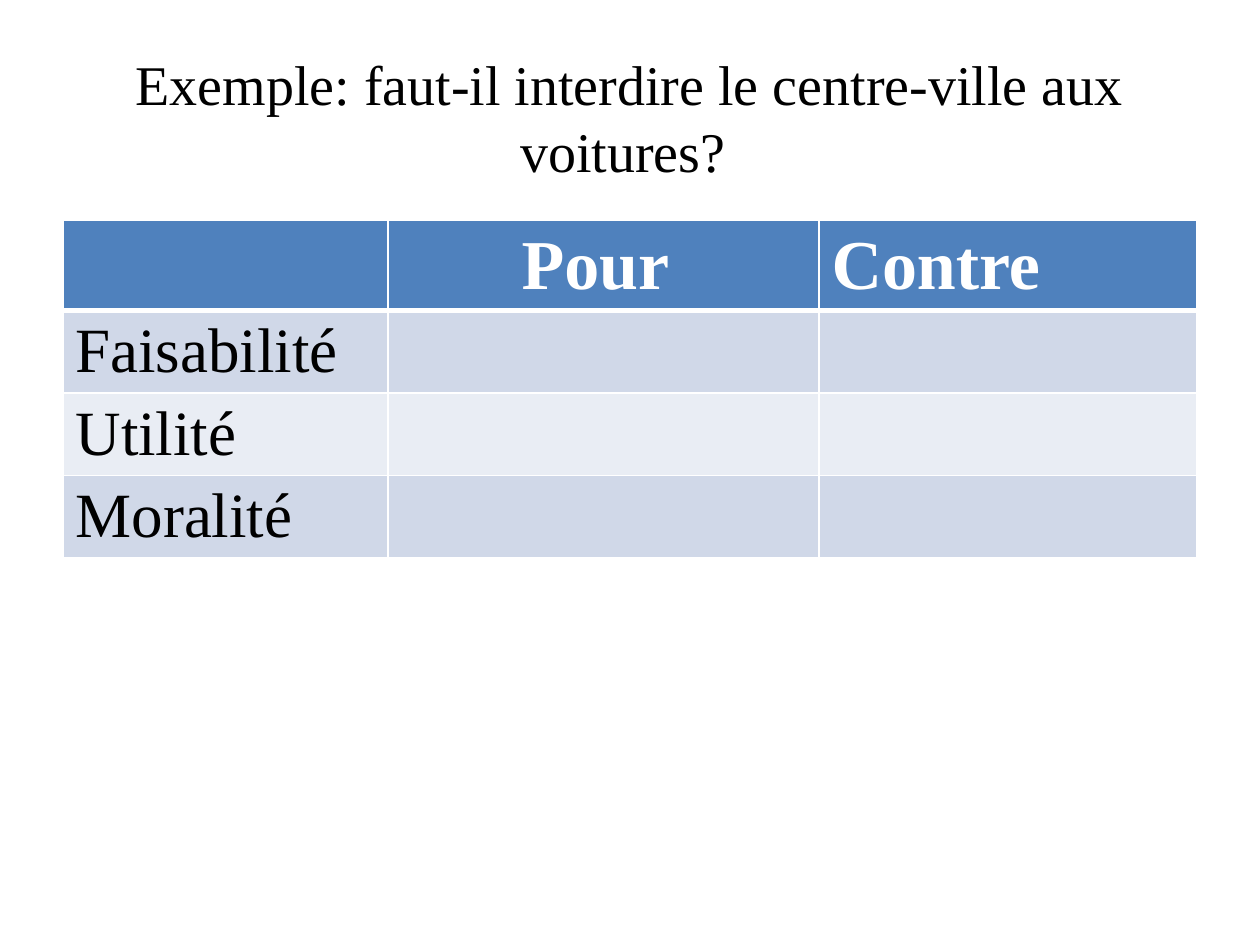
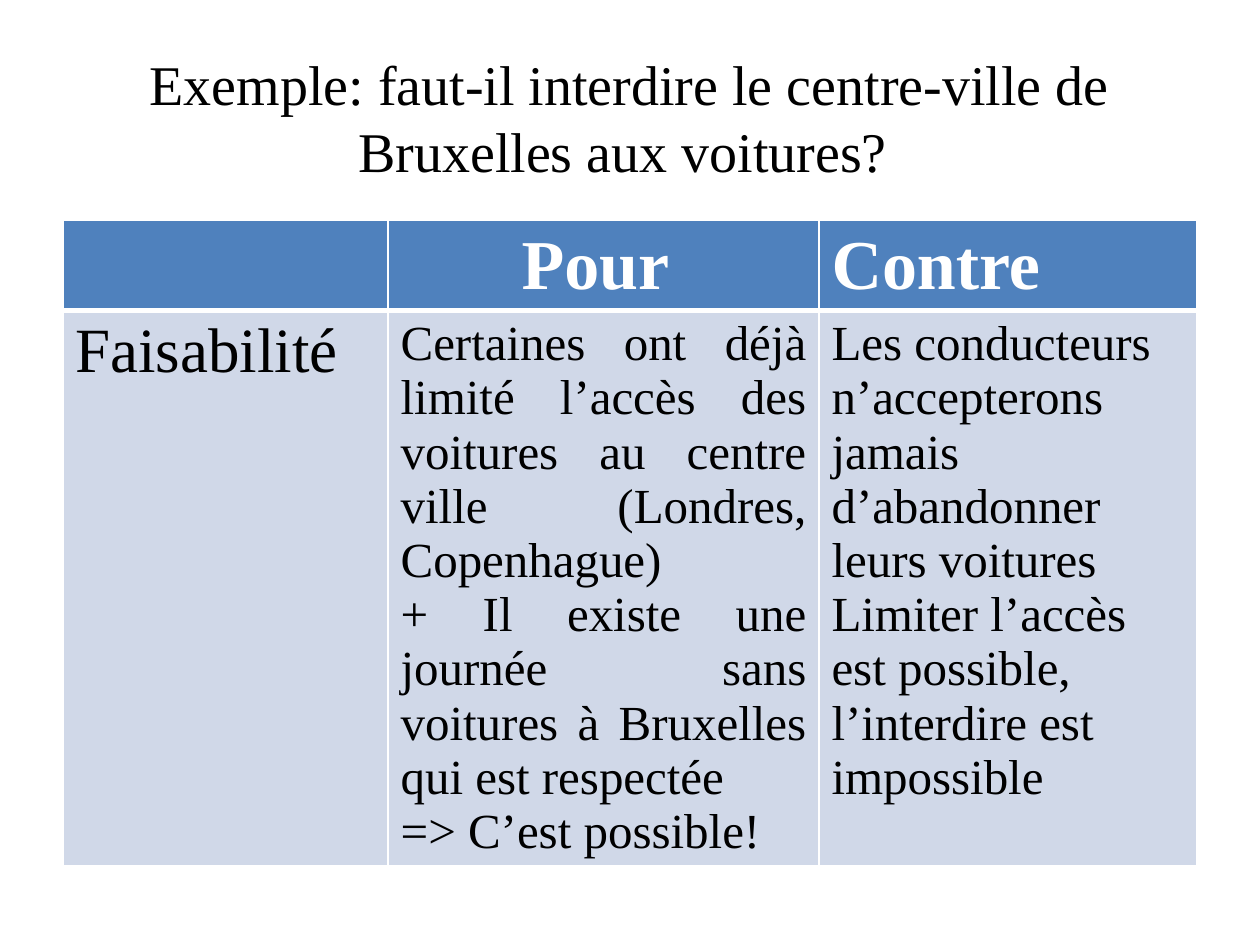
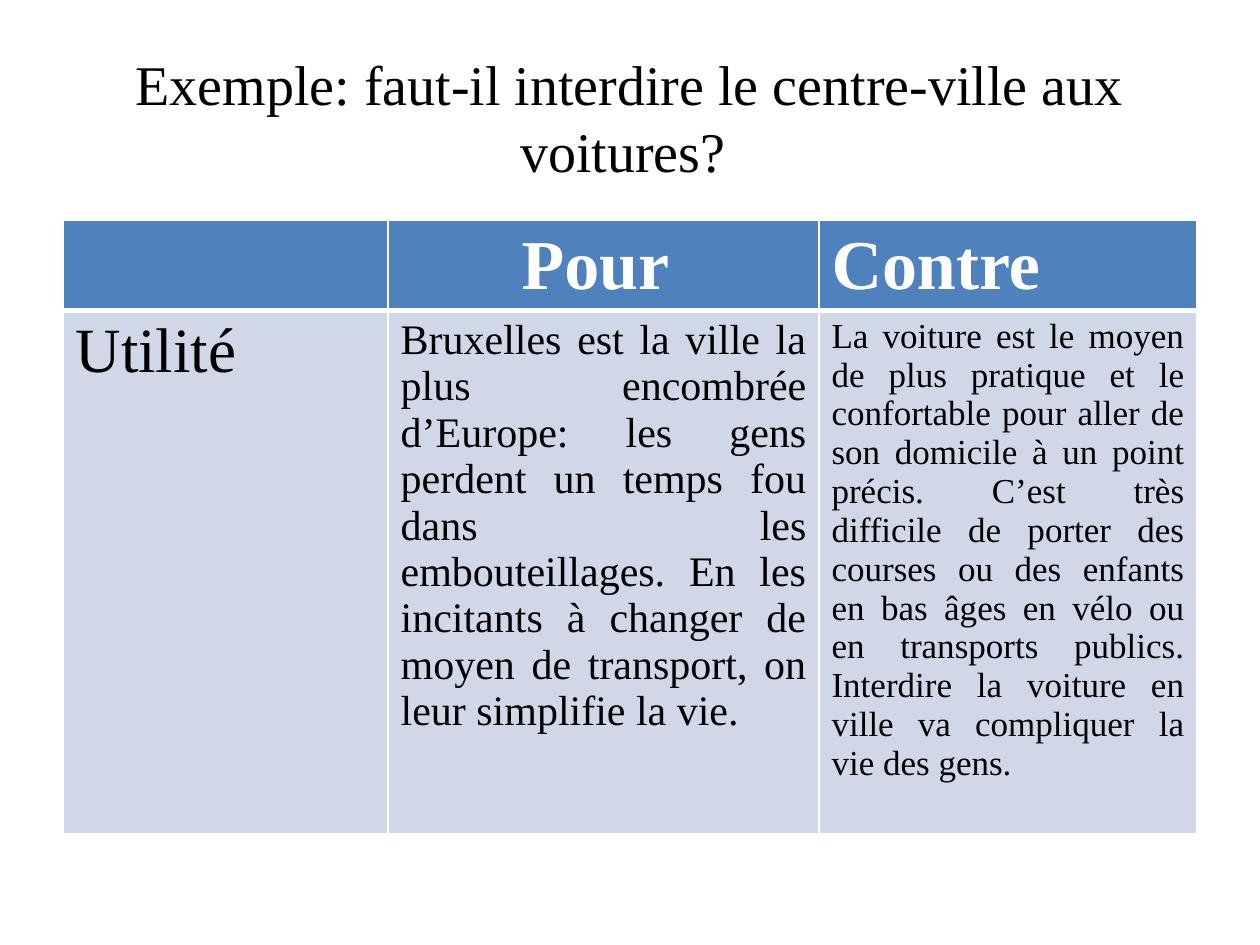
from lxml import etree
from pptx import Presentation
from pptx import util as u
from pptx.dml import color
from pptx.enum import text
from pptx.oxml import ns

GRID_COLUMNS, GRID_ROWS = 20, 30
COLUMN_SPANS = (5.16, 6.84, 6)
HEADER_ROWS, CRITERION_ROWS = 2.8, 2.6
LEFT, CENTER, JUSTIFY = text.PP_ALIGN.LEFT, text.PP_ALIGN.CENTER, text.PP_ALIGN.JUSTIFY

HEADER_FILL, BODY_FILLS = "4F81BD", ("D0D8E8", "E9EDF4")
BLACK, WHITE = "000000", "FFFFFF"
THIN, THICK = 1, 3

QUESTION = "Exemple: faut-il interdire le centre-ville aux voitures? "
BRUSSELS_QUESTION = "Exemple: faut-il interdire le centre-ville de Bruxelles aux voitures? "
FEASIBILITY_FOR = (
    "Certaines ont déjà limité l’accès des voitures au centre ville (Londres, Copenhague)",
    "+ Il existe une journée sans voitures à Bruxelles qui est respectée",
    "=> C’est possible!",
)
FEASIBILITY_AGAINST = (
    "Les conducteurs n’accepterons jamais d’abandonner leurs voitures",
    "Limiter l’accès est possible, l’interdire est impossible",
)
UTILITY_FOR = (
    "Bruxelles est la ville la plus encombrée d’Europe: les gens perdent un temps fou "
    "dans les embouteillages. En les incitants à changer de moyen de transport, "
    "on leur simplifie la vie. ",
)
UTILITY_AGAINST = (
    "La voiture est le moyen de plus pratique et le confortable pour aller de son domicile "
    "à un point précis. C’est très difficile de porter des courses ou des enfants en bas âges "
    "en vélo ou en transports publics. Interdire la voiture en ville va compliquer la vie des gens.",
)


def rgb(value):
    return color.RGBColor.from_string(value)


def assign(target, values):
    for name, value in values.items():
        setattr(target, name, value)


class Deck:
    font = "Times New Roman"

    def __init__(self):
        self.presentation = Presentation()
        assign(self.presentation, {"slide_width": u.Inches(10), "slide_height": u.Inches(7.5)})
        self.slide = None

    def across(self, columns):
        return round(self.presentation.slide_width * columns / GRID_COLUMNS)

    def down(self, rows):
        return round(self.presentation.slide_height * rows / GRID_ROWS)

    def box(self, left, top, width, height):
        return {"left": self.across(left), "top": self.down(top),
                "width": self.across(width), "height": self.down(height)}

    def add_lines(self, frame, lines, size, alignment=LEFT, ink=BLACK, bold=False):
        for index, line in enumerate(lines):
            paragraph = frame.add_paragraph() if index else frame.paragraphs[0]
            paragraph.alignment = alignment
            run = paragraph.add_run()
            run.text = line
            assign(run.font, {"name": self.font, "size": u.Pt(size), "bold": bold})
            run.font.color.rgb = rgb(ink)

    def add_slide(self, title):
        self.slide = self.presentation.slides.add_slide(self.presentation.slide_layouts[5])
        shape = self.slide.shapes.title
        assign(shape, self.box(1, 1.2, 18, 5))
        assign(shape.text_frame, {"word_wrap": True, "auto_size": text.MSO_AUTO_SIZE.NONE,
                                  "vertical_anchor": text.MSO_ANCHOR.MIDDLE})
        self.add_lines(shape.text_frame, [title], 32, CENTER)

    def style_cell(self, cell, fill, top, bottom):
        cell.fill.solid()
        cell.fill.fore_color.rgb = rgb(fill)
        properties = cell._tc.get_or_add_tcPr()
        widths = {"a:lnL": THIN, "a:lnR": THIN, "a:lnT": top, "a:lnB": bottom}
        for index, (tag, width) in enumerate(widths.items()):
            line = etree.Element(ns.qn(tag), w=str(u.Pt(width)))
            solid = etree.SubElement(line, ns.qn("a:solidFill"))
            etree.SubElement(solid, ns.qn("a:srgbClr"), val=WHITE)
            properties.insert(index, line)

    def add_arguments(self, criteria, body_rows=CRITERION_ROWS):
        heights = [HEADER_ROWS] + [body_rows] * len(criteria)
        box = self.box(1, 7, sum(COLUMN_SPANS), sum(heights))
        table = self.slide.shapes.add_table(len(heights), len(COLUMN_SPANS), **box).table
        for column, span in zip(table.columns, COLUMN_SPANS):
            column.width = self.across(span)
        for index, height in enumerate(heights):
            table.rows[index].height = self.down(height)
            fill = BODY_FILLS[(index - 1) % 2] if index else HEADER_FILL
            for cell in table.rows[index].cells:
                self.style_cell(cell, fill, THICK if index == 1 else THIN,
                                THIN if index else THICK)
        for column, (heading, alignment) in enumerate((("Pour ", CENTER), ("Contre", LEFT)), 1):
            self.add_lines(table.cell(0, column).text_frame, [heading], 40, alignment, WHITE, True)
        for row, (criterion, *arguments) in enumerate(criteria, 1):
            self.add_lines(table.cell(row, 0).text_frame, [criterion], 36)
            for column, (lines, size, alignment) in enumerate(arguments, 1):
                self.add_lines(table.cell(row, column).text_frame, lines, size, alignment)


def main():
    deck = Deck()
    deck.add_slide(QUESTION)
    deck.add_arguments([("Faisabilité",), ("Utilité",), ("Moralité",)])
    deck.add_slide(BRUSSELS_QUESTION)
    deck.add_arguments([("Faisabilité", (FEASIBILITY_FOR, 28, JUSTIFY),
                         (FEASIBILITY_AGAINST, 28, LEFT))], 17.6)
    deck.add_slide(QUESTION)
    deck.add_arguments([("Utilité", (UTILITY_FOR, 24, JUSTIFY),
                         (UTILITY_AGAINST, 20, JUSTIFY))], 16.6)
    deck.presentation.save("out.pptx")


if __name__ == "__main__":
    main()
